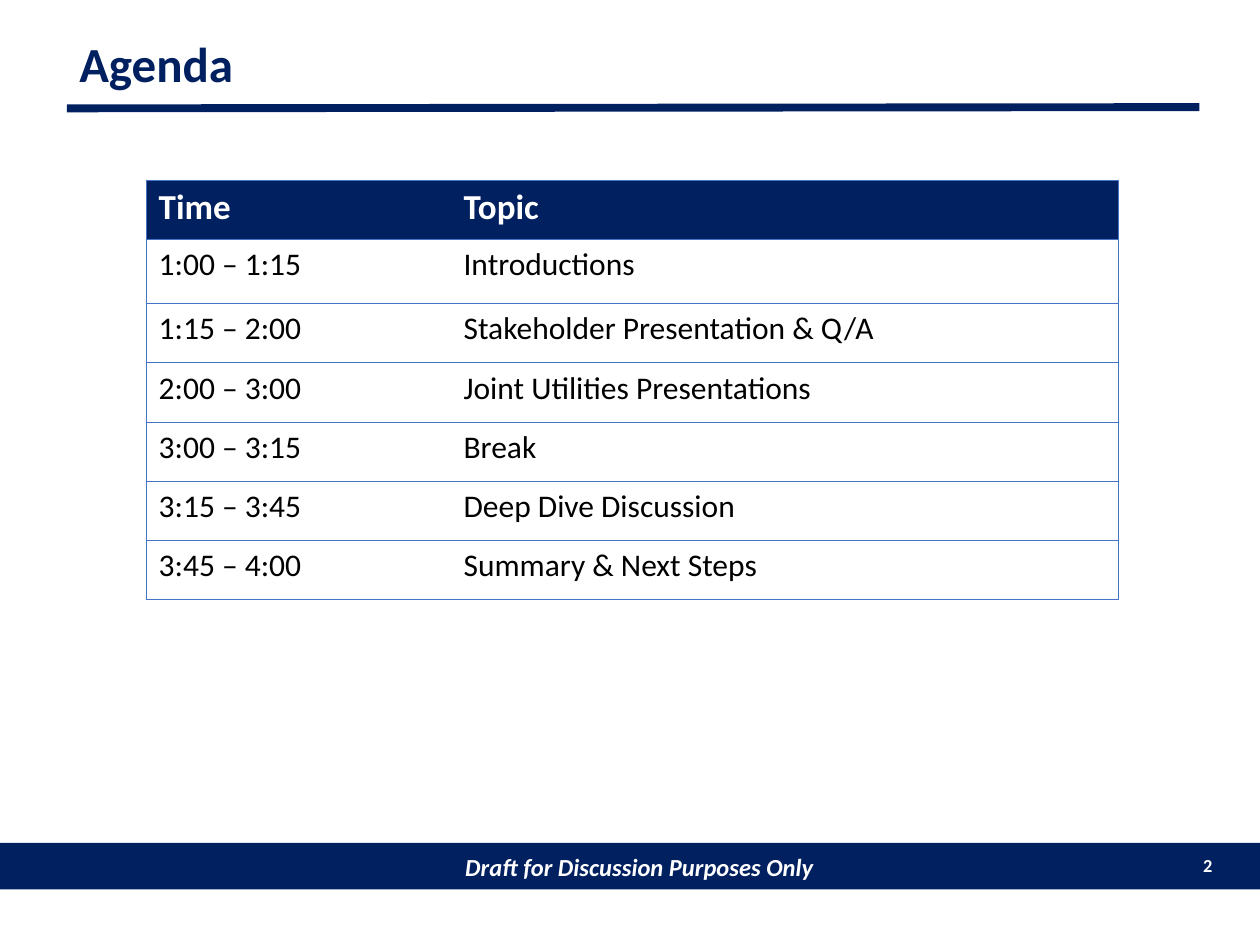
from dataclasses import dataclass
from typing import Any

import pptx
import pptx.dml.color
import pptx.enum.shapes
import pptx.enum.text
import pptx.oxml.ns
import pptx.util
from lxml import etree
from pptx.util import Inches

Align = pptx.enum.text.PP_ALIGN
Anchor = pptx.enum.text.MSO_ANCHOR


@dataclass(frozen=True)
class Theme:
    font: str = "Calibri"
    navy: str = "002060"
    border: str = "4472C4"
    white: str = "FFFFFF"
    black: str = "000000"
    title_size: float = 28
    header_size: float = 20
    body_size: float = 18
    footer_size: float = 14
    number_size: float = 10.5
    rule_width: float = 4.5
    border_width: float = 0.5


@dataclass(frozen=True)
class Session:
    time: str
    topic: str


THEME = Theme()
HEADING = Session("Time", "Topic")
SESSIONS = [
    Session("1:00 – 1:15", "Introductions"),
    Session("1:15 – 2:00", "Stakeholder Presentation & Q/A"),
    Session("2:00 – 3:00", "Joint Utilities Presentations"),
    Session("3:00 – 3:15", "Break"),
    Session("3:15 – 3:45", "Deep Dive Discussion"),
    Session("3:45 – 4:00", "Summary & Next Steps"),
]
COLUMN_WIDTHS = (2.42, 5.3)
ROW_HEIGHT = 0.47
FIRST_SESSION_HEIGHT = 0.51


def rgb(value: str) -> pptx.dml.color.RGBColor:
    return pptx.dml.color.RGBColor.from_string(value)


def write(frame: Any, text: str, size: float, color: str,
          align: Any = Align.LEFT, **extra: Any) -> None:
    """Put one formatted paragraph in a text frame."""
    frame.word_wrap = True
    paragraph = frame.paragraphs[0]
    paragraph.alignment = align
    run = paragraph.add_run()
    run.text = text
    formats = {"name": THEME.font, "size": pptx.util.Pt(size), **extra}
    for attribute, value in formats.items():
        setattr(run.font, attribute, value)
    run.font.color.rgb = rgb(color)


def set_border(cell: Any, side: str, shown: bool) -> None:
    """Draw or clear one side of a cell; call before filling the cell."""
    qn = pptx.oxml.ns.qn
    width = pptx.util.Pt(THEME.border_width)
    line = etree.SubElement(cell._tc.get_or_add_tcPr(), qn(f"a:ln{side}"), w=str(width))
    if shown:
        fill = etree.SubElement(line, qn("a:solidFill"))
        etree.SubElement(fill, qn("a:srgbClr"), val=THEME.border)
    else:
        etree.SubElement(line, qn("a:noFill"))


def add_title(slide: Any, text: str) -> None:
    title = slide.shapes.title
    title.left, title.top = Inches(0.53), Inches(0.25)
    title.width, title.height = Inches(8.99), Inches(0.55)
    title.text_frame.vertical_anchor = Anchor.MIDDLE
    write(title.text_frame, text, THEME.title_size, THEME.navy, bold=True)
    title.text_frame.paragraphs[0].line_spacing = 0.9


def add_title_rule(slide: Any) -> None:
    rule = slide.shapes.add_connector(
        pptx.enum.shapes.MSO_CONNECTOR.STRAIGHT,
        Inches(0.53), Inches(0.86), Inches(9.52), Inches(0.85))
    rule.line.color.rgb = rgb(THEME.navy)
    rule.line.width = pptx.util.Pt(THEME.rule_width)
    etree.SubElement(rule._element.spPr, pptx.oxml.ns.qn("a:effectLst"))


def add_footer(slide: Any, text: str, number: str) -> None:
    band = slide.shapes.add_shape(
        pptx.enum.shapes.MSO_SHAPE.RECTANGLE,
        0, Inches(6.69), Inches(10), Inches(0.37))
    band.shadow.inherit = False
    band.fill.solid()
    band.fill.fore_color.rgb = rgb(THEME.navy)
    band.line.fill.background()
    band.text_frame.margin_left = Inches(0.25)
    write(band.text_frame, text, THEME.footer_size, THEME.white,
          Align.CENTER, bold=True, italic=True)

    page = slide.shapes.add_textbox(
        Inches(9.31), Inches(6.73), Inches(0.41), Inches(0.29))
    write(page.text_frame, number, THEME.number_size, THEME.white,
          Align.RIGHT, bold=True)


def add_agenda(slide: Any, sessions: list[Session]) -> None:
    rows = [HEADING, *sessions]
    heights = [ROW_HEIGHT, FIRST_SESSION_HEIGHT] + [ROW_HEIGHT] * (len(rows) - 2)
    agenda = slide.shapes.add_table(
        len(rows), len(COLUMN_WIDTHS), Inches(1.16), Inches(1.43),
        Inches(sum(COLUMN_WIDTHS)), Inches(sum(heights))).table
    agenda.first_row = agenda.horz_banding = False
    for column, width in zip(agenda.columns, COLUMN_WIDTHS):
        column.width = Inches(width)

    for row, session, height in zip(agenda.rows, rows, heights):
        row.height = Inches(height)
        heading = session is HEADING
        for column, text in enumerate((session.time, session.topic)):
            cell = row.cells[column]
            # Horizontal rules throughout, vertical ones on the outside only
            sides = {"L": column == 0, "R": column == 1, "T": True, "B": True}
            for side, shown in sides.items():
                set_border(cell, side, shown)
            if heading:
                cell.fill.solid()
                cell.fill.fore_color.rgb = rgb(THEME.navy)
            else:
                cell.fill.background()
            write(cell.text_frame, text,
                  THEME.header_size if heading else THEME.body_size,
                  THEME.white if heading else THEME.black, bold=heading)


def main() -> None:
    deck = pptx.Presentation()
    deck.slide_width, deck.slide_height = Inches(10), Inches(7.5)
    slide = deck.slides.add_slide(deck.slide_layouts[5])  # title only
    add_footer(slide, "Draft for Discussion Purposes Only", "2")
    add_title_rule(slide)
    add_title(slide, "Agenda")
    add_agenda(slide, SESSIONS)
    deck.save("out.pptx")


if __name__ == "__main__":
    main()
